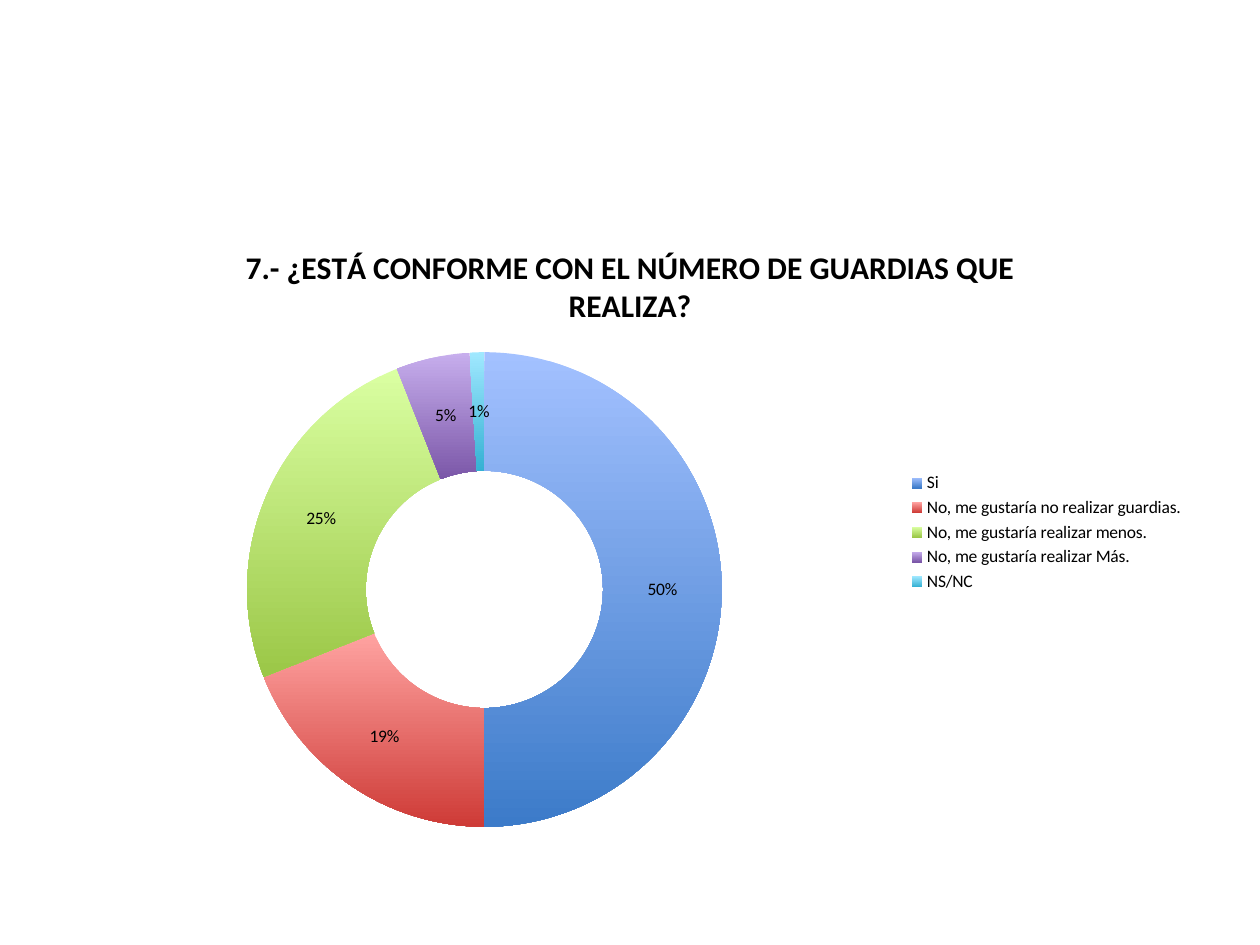
from dataclasses import dataclass

from pptx import Presentation
from pptx.chart.data import CategoryChartData
from pptx.dml.color import RGBColor
from pptx.enum.chart import XL_CHART_TYPE, XL_LEGEND_POSITION
from pptx.util import Pt

DOUGHNUT = XL_CHART_TYPE.DOUGHNUT
LEGEND_RIGHT = XL_LEGEND_POSITION.RIGHT


@dataclass(frozen=True)
class Theme:
    font: str = "Calibri"
    text: str = "000000"
    question_size: int = 18
    label_size: int = 10
    gradients: tuple = (
        ("A3C1FF", "3C7BC9"),
        ("FFA3A1", "CE3B37"),
        ("DAFFA2", "9BC747"),
        ("C7AEED", "7B57A8"),
        ("A0E8FF", "35B1D3"),
    )


theme = Theme()


def style_font(font, size, bold=False):
    font.name = theme.font
    font.size = Pt(size)
    font.bold = bold
    font.color.rgb = RGBColor.from_string(theme.text)


question = "7.- ¿ESTÁ CONFORME CON EL NÚMERO DE GUARDIAS QUE REALIZA?"
answers = {
    "Si": 50,
    "No, me gustaría no realizar guardias.": 19,
    "No, me gustaría realizar menos.": 25,
    "No, me gustaría realizar Más.": 5,
    "NS/NC": 1,
}

prs = Presentation()
prs.slide_width = Pt(720)
prs.slide_height = Pt(540)
slide = prs.slides.add_slide(prs.slide_layouts[6])

survey = CategoryChartData()
survey.categories = list(answers)
survey.add_series(question, list(answers.values()))
chart = slide.shapes.add_chart(
    DOUGHNUT, Pt(36), Pt(126), Pt(648), Pt(356.4), survey
).chart
style_font(chart.font, theme.label_size)

chart.has_title = True
heading = chart.chart_title.text_frame.paragraphs[0].add_run()
heading.text = question
style_font(heading.font, theme.question_size, bold=True)
chart.chart_title.include_in_layout = False

chart.has_legend = True
chart.legend.position = LEGEND_RIGHT
chart.legend.include_in_layout = False
style_font(chart.legend.font, theme.label_size)

ring = chart.plots[0]
ring.vary_by_categories = True
ring.has_data_labels = True
shares = ring.data_labels
shares.show_percentage = True
shares.show_value = False
shares.number_format = "0%"
shares.number_format_is_linked = False
style_font(shares.font, theme.label_size)

for index, colors in enumerate(theme.gradients):
    segment = ring.series[0].points[index].format
    segment.fill.gradient()
    segment.fill.gradient_angle = 270
    for stop, color in zip(segment.fill.gradient_stops, colors):
        stop.color.rgb = RGBColor.from_string(color)
    segment.line.fill.background()

prs.save("out.pptx")
